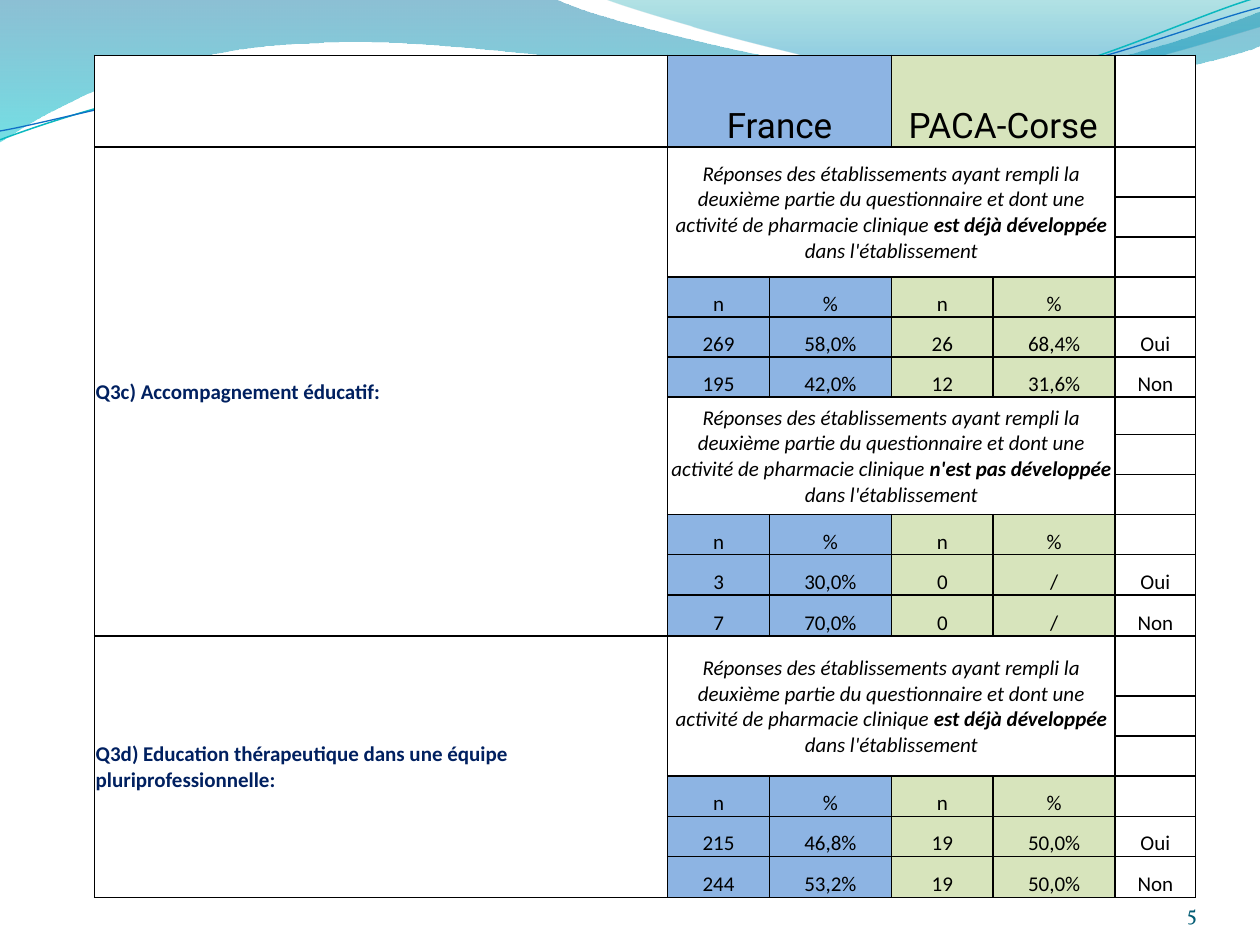
import math

from lxml import etree
from pptx import Presentation, util as u
from pptx.dml.color import RGBColor
from pptx.enum import text
from pptx.oxml.ns import qn

Inches = u.Inches
THEME = {
    "white": "FFFFFF", "black": "000000", "navy": "002060",
    "france": "8DB4E3", "paca": "D7E4BC", "number": "045D75",
    "body": ("Calibri", 12), "header": ("Roboto", 20), "footer": ("Vollkorn", 12),
}
CENTER, LEFT, RIGHT = text.PP_ALIGN.CENTER, text.PP_ALIGN.LEFT, text.PP_ALIGN.RIGHT
MIDDLE, BOTTOM = text.MSO_ANCHOR.MIDDLE, text.MSO_ANCHOR.BOTTOM
NO_MARGINS = {f"margin_{side}": 0 for side in ("left", "top", "right", "bottom")}


def add_outline(start, segments, close):
    """Draw segments of one point (line) or three points (cubic curve), in inches."""
    builder = slide.shapes.build_freeform(Inches(start[0]), Inches(start[1]))
    builder.add_line_segments([(Inches(s[-1][0]), Inches(s[-1][1])) for s in segments], close)
    shape = builder.convert_to_shape()
    shape.shadow.inherit = False
    lines = list(shape._element.iter(qn("a:lnTo")))
    for line, segment in zip(lines, segments):
        if len(segment) == 3:
            line.tag = qn("a:cubicBezTo")
            line.clear()
            for x, y in segment:
                etree.SubElement(line, qn("a:pt"), x=str(Inches(x) - shape.left),
                                 y=str(Inches(y) - shape.top))
    return shape


def add_runs(paragraph, runs, font, color, align):
    """Fill a paragraph from pairs of wording and font attributes."""
    paragraph.alignment = align
    for wording, style in runs:
        run = paragraph.add_run()
        run.text = wording
        run.font.color.rgb = RGBColor.from_string(color)
        formats = {"name": font[0], "size": u.Pt(font[1]), **style}
        for name, value in formats.items():
            setattr(run.font, name, value)


presentation = Presentation()
presentation.slide_width, presentation.slide_height = Inches(10), Inches(7.5)
slide = presentation.slides.add_slide(presentation.slide_layouts[6])

# Waves along the top: outline, then gradient stops as position, colour, opacity
waves = [
    ((0, 0),
     [[(4.4, -0.01)],
      [(4.76, 0.17), (6.64, 0.63), (7.58, 0.63)],
      [(8.53, 0.63), (9.58, 0.26), (10, 0.09)],
      [(10.01, 0.36)],
      [(9.83, 0.44), (8.7, 0.76), (7.46, 0.75)],
      [(6.22, 0.75), (3.82, 0.28), (2.57, 0.34)],
      [(1.29, 0.36), (0.46, 0.83), (-0.01, 1.13)]],
     [(0, "0074A1", 45), (1, "00C6CF", 55)]),
    ((4.79, -0.01),
     [[(5.09, 0.11), (6.82, 0.62), (7.69, 0.65)],
      [(8.56, 0.69), (9.61, 0.32), (10, 0.21)],
      [(10, 0)]],
     [(0, "00A1A9", 30), (0.8, "008BBF", 45)]),
]
for start, segments, stops in waves:
    shape = add_outline(start, segments, True)
    shape.line.fill.background()
    shape.fill.gradient()
    shape.fill.gradient_angle = 270
    for stop, (position, color, opacity) in zip(shape.fill.gradient_stops, stops):
        stop.position = position
        stop.color.rgb = RGBColor.from_string(color)
        color_element = stop._gs.find(qn("a:srgbClr"))
        etree.SubElement(color_element, qn("a:alpha"), val=str(opacity * 1000))

# Thin lines, drawn level and then tilted about their centre
TILT = 2.7
cosine, sine = math.cos(math.radians(TILT)), math.sin(math.radians(TILT))
swooshes = [
    ("0AB8BF", 0.85, (4.99, 0.57),
     [[(0, 1.11)],
      [(0.48, 0.93), (1.58, 0.57), (2.77, 0.52)],
      [(3.95, 0.47), (5.93, 0.89), (7.13, 0.8)],
      [(8.33, 0.71), (9.38, 0.15), (9.98, -0.02)]]),
    ("0F6FC6", 0.75, (5, 0.59),
     [[(0, 1.04)],
      [(0.47, 0.96), (1.64, 0.61), (2.83, 0.56)],
      [(4.03, 0.51), (5.97, 0.84), (7.17, 0.75)],
      [(8.36, 0.67), (9.41, 0.21), (10, 0.06)]]),
]
for color, width, (cx, cy), segments in swooshes:
    (start,), *curves = [[(cx + (x - cx) * cosine - (y - cy) * sine,
                           cy + (x - cx) * sine + (y - cy) * cosine)
                          for x, y in segment] for segment in segments]
    shape = add_outline(start, curves, False)
    shape.fill.background()
    shape.line.color.rgb = RGBColor.from_string(color)
    shape.line.width = u.Pt(width)
    shape.rotation = 360 - TILT

# Survey table: (row, column) -> runs, font, colour, alignment, anchor
TABLE_WIDTH, TABLE_HEIGHT = 8.74, 6.69
columns = [4.56, 0.81, 0.97, 0.81, 0.97, 0.64]
rows = [0.73, 0.4] + [0.32] * 5 + [0.3] + [0.32] * 4 + [0.33, 0.48] + [0.32] * 4 + [0.33]
groups = [
    (1, "est déjà développée",
     [["269", "58,0%", "26", "68,4%", "Oui"], ["195", "42,0%", "12", "31,6%", "Non"]]),
    (7, "n'est pas développée",
     [["3", "30,0%", "0", "/", "Oui"], ["7", "70,0%", "0", "/", "Non"]]),
    (13, "est déjà développée",
     [["215", "46,8%", "19", "50,0%", "Oui"], ["244", "53,2%", "19", "50,0%", "Non"]]),
]
questions = [
    (1, 12, "Q3c) Accompagnement éducatif:"),
    (13, 18, "Q3d) Education thérapeutique dans une équipe pluriprofessionnelle:"),
]
contents, merges, fills = {}, [], {}
for column, region, fill in [(1, "France", "france"), (3, "PACA-Corse", "paca")]:
    contents[0, column] = ([(region, {})], THEME["header"], THEME["black"], CENTER, BOTTOM)
    merges.append((0, column, 0, column + 1))
    fills[0, column] = THEME[fill]
for first, last, question in questions:
    contents[first, 0] = ([(question, {"bold": True})], THEME["body"], THEME["navy"],
                          LEFT, MIDDLE)
    merges.append((first, 0, last, 0))
for first, status, answers in groups:
    runs = [
        ("Réponses des établissements ayant rempli la deuxième partie du questionnaire "
         "et dont une activité de pharmacie clinique ", {"italic": True}),
        (status, {"italic": True, "bold": True}),
        (" dans l'établissement", {"italic": True}),
    ]
    contents[first, 1] = (runs, THEME["body"], THEME["black"], CENTER, MIDDLE)
    merges.append((first, 1, first + 2, 4))
    for row, values in enumerate([["n", "%", "n", "%"]] + answers, first + 3):
        for column, value in enumerate(values, 1):
            contents[row, column] = ([(value, {})], THEME["body"], THEME["black"],
                                     CENTER, BOTTOM)
            if column < 5:
                fills[row, column] = THEME["france" if column < 3 else "paca"]

frame = slide.shapes.add_table(len(rows), len(columns), Inches(0.75), Inches(0.44),
                               Inches(TABLE_WIDTH), Inches(TABLE_HEIGHT))
table = frame.table
table.first_row = table.horz_banding = False
for column, width in zip(table.columns, columns):
    column.width = Inches(width * TABLE_WIDTH / sum(columns))
for row, height in zip(table.rows, rows):
    row.height = Inches(height * TABLE_HEIGHT / sum(rows))
for top, left, bottom, right in merges:
    table.cell(top, left).merge(table.cell(bottom, right))

cell_margins = {**NO_MARGINS, **{f"margin_{side}": Inches(0.01)
                                 for side in ("left", "top", "right")}}
for row in range(len(rows)):
    for column in range(len(columns)):
        cell = table.cell(row, column)
        for name, value in cell_margins.items():
            setattr(cell, name, value)
        properties = cell._tc.get_or_add_tcPr()
        for edge in ("lnL", "lnR", "lnT", "lnB"):
            border = etree.SubElement(properties, qn(f"a:{edge}"), w=str(u.Pt(1)))
            paint = etree.SubElement(border, qn("a:solidFill"))
            etree.SubElement(paint, qn("a:srgbClr"), val=THEME["black"])
        cell.fill.solid()
        cell.fill.fore_color.rgb = RGBColor.from_string(
            fills.get((row, column), THEME["white"]))
        paragraph = cell.text_frame.paragraphs[0]
        if (row, column) in contents:
            *content, cell.vertical_anchor = contents[row, column]
            add_runs(paragraph, *content)
        else:
            etree.SubElement(paragraph._p, qn("a:endParaRPr"),
                             sz=str(THEME["body"][1] * 100))

# Slide number
number_box = slide.shapes.add_textbox(Inches(8.67), Inches(6.95), Inches(0.83), Inches(0.4))
box_formats = {**NO_MARGINS, "word_wrap": True, "vertical_anchor": BOTTOM}
for name, value in box_formats.items():
    setattr(number_box.text_frame, name, value)
add_runs(number_box.text_frame.paragraphs[0], [("5", {})], THEME["footer"],
         THEME["number"], RIGHT)

presentation.save("out.pptx")
